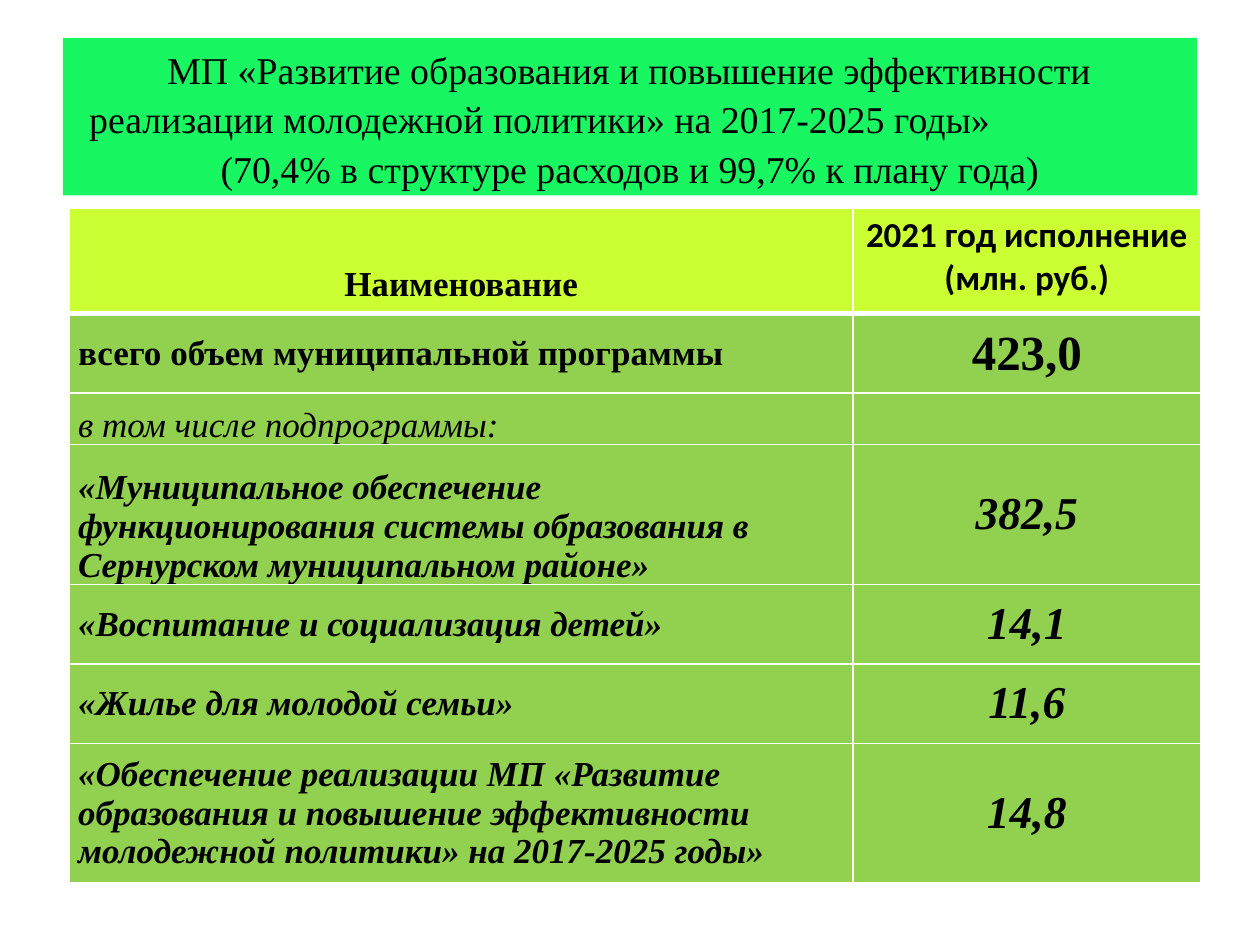
from lxml.etree import SubElement
from pptx import Presentation
from pptx.dml.color import RGBColor
from pptx.enum.shapes import MSO_SHAPE
from pptx.enum.text import MSO_ANCHOR, PP_ALIGN
from pptx.oxml.ns import qn
from pptx.util import Emu, Inches, Pt

BLACK = RGBColor(0x00, 0x00, 0x00)
WHITE = RGBColor(0xFF, 0xFF, 0xFF)
GREEN = RGBColor(0x18, 0xF6, 0x62)
LIME = RGBColor(0xCC, 0xFF, 0x33)
LEAF = RGBColor(0x92, 0xD0, 0x50)

TITLE = [
    "МП «Развитие образования и повышение эффективности реализации молодежной политики» на 2017-2025 годы»",
    "(70,4% в структуре расходов и 99,7% к плану года)",
]
HEADERS = ["Наименование", "2021 год исполнение\n(млн. руб.)"]
BOLD, ITALIC, BOLD_ITALIC = (True, False), (False, True), (True, True)
PROGRAMMES = [
    ("всего объем муниципальной программы", "423,0", 28, BOLD, MSO_ANCHOR.MIDDLE),
    ("в том числе подпрограммы:", "", 18, ITALIC, MSO_ANCHOR.BOTTOM),
    ("«Муниципальное обеспечение функционирования системы образования в Сернурском муниципальном районе»",
     "382,5", 26, BOLD_ITALIC, MSO_ANCHOR.BOTTOM),
    ("«Воспитание и социализация детей»", "14,1", 26, BOLD_ITALIC, MSO_ANCHOR.MIDDLE),
    ("«Жилье для молодой семьи»", "11,6", 26, BOLD_ITALIC, MSO_ANCHOR.MIDDLE),
    ("«Обеспечение реализации МП «Развитие образования и повышение эффективности "
     "молодежной политики» на 2017-2025 годы»", "14,8", 26, BOLD_ITALIC, MSO_ANCHOR.MIDDLE),
]
COLUMN_WIDTHS = [6.22, 2.76]
ROW_HEIGHTS = [0.84, 0.63, 0.41, 1.11, 0.63, 0.63, 1.11]


class SlideBuilder:
    font = "Times New Roman"
    text_size = 20

    def __init__(self, presentation):
        self.width = presentation.slide_width
        self.height = presentation.slide_height
        self.slide = presentation.slides.add_slide(presentation.slide_layouts[6])

    def place(self, left, top, width, height):
        return (Emu(round(left * self.width)), Emu(round(top * self.height)),
                Emu(round(width * self.width)), Emu(round(height * self.height)))

    def style_text(self, text_frame, size, align, weight=(False, False), font=None):
        for paragraph in text_frame.paragraphs:
            paragraph.alignment = align
            paragraph.font.size = Pt(size)
            for run in paragraph.runs:
                run.font.name = font or self.font
                run.font.size = Pt(size)
                run.font.bold, run.font.italic = weight
                run.font.color.rgb = BLACK

    def title(self, lines, area):
        shape = self.slide.shapes.add_shape(MSO_SHAPE.RECTANGLE, *self.place(*area))
        shape.shadow.inherit = False
        shape.fill.solid()
        shape.fill.fore_color.rgb = GREEN
        shape.line.fill.background()
        text_frame = shape.text_frame
        text_frame.word_wrap = True
        text_frame.vertical_anchor = MSO_ANCHOR.MIDDLE
        text_frame.text = "\n".join(lines)
        self.style_text(text_frame, 21.6, PP_ALIGN.CENTER)
        for paragraph in text_frame.paragraphs:
            paragraph.line_spacing = 1.09
        name = text_frame.paragraphs[0]
        name.alignment = PP_ALIGN.LEFT
        properties = name._p.get_or_add_pPr()
        properties.set("marL", str(Inches(0.11)))
        properties.set("indent", str(Inches(0.62)))

    def table(self, area, column_widths, row_heights):
        table = self.slide.shapes.add_table(
            len(row_heights), len(column_widths), *self.place(*area)).table
        for column, width in zip(table.columns, column_widths):
            column.width = Inches(width)
        for row, height in zip(table.rows, row_heights):
            row.height = Inches(height)
        return table

    def cell(self, cell, text, fill, size, align, weight, anchor,
             margins=(0.07, 0, 0.07, 0), font=None, edges=(1, 1)):
        cell.text_frame.text = text
        self.style_text(cell.text_frame, size, align, weight, font)
        cell.vertical_anchor = anchor
        (cell.margin_left, cell.margin_top,
         cell.margin_right, cell.margin_bottom) = map(Inches, margins)
        top, bottom = edges
        properties = cell._tc.get_or_add_tcPr()
        for side, width in (("L", 1), ("R", 1), ("T", top), ("B", bottom)):
            line = SubElement(properties, qn(f"a:ln{side}"), w=str(Pt(width)))
            color = SubElement(line, qn("a:solidFill"))
            SubElement(color, qn("a:srgbClr"), val=str(WHITE))
        cell.fill.solid()
        cell.fill.fore_color.rgb = fill

    def header(self, table, labels):
        styles = [
            (MSO_ANCHOR.BOTTOM, (0.01, 0.01, 0.01, 0.08), self.font),
            (MSO_ANCHOR.TOP, (0.1, 0.05, 0.1, 0.05), "Calibri"),
        ]
        for column, (label, (anchor, margins, font)) in enumerate(zip(labels, styles)):
            self.cell(table.cell(0, column), label, LIME, self.text_size,
                      PP_ALIGN.CENTER, BOLD, anchor, margins, font, (1, 3))

    def body(self, table, programmes):
        for row, (name, value, size, weight, anchor) in enumerate(programmes, 1):
            edges = (3 if row == 1 else 1, 1)
            self.cell(table.cell(row, 0), name, LEAF, self.text_size,
                      PP_ALIGN.LEFT, weight, anchor, edges=edges)
            self.cell(table.cell(row, 1), value, LEAF, size,
                      PP_ALIGN.CENTER, weight, MSO_ANCHOR.MIDDLE, edges=edges)


def main():
    presentation = Presentation()
    presentation.slide_width = Inches(10)
    presentation.slide_height = Inches(7.5)
    builder = SlideBuilder(presentation)
    builder.title(TITLE, (0.05, 0.04, 0.9, 1 / 6))
    table = builder.table((0.055, 0.22, 0.9, 0.72), COLUMN_WIDTHS, ROW_HEIGHTS)
    builder.header(table, HEADERS)
    builder.body(table, PROGRAMMES)
    presentation.save("out.pptx")


if __name__ == "__main__":
    main()
